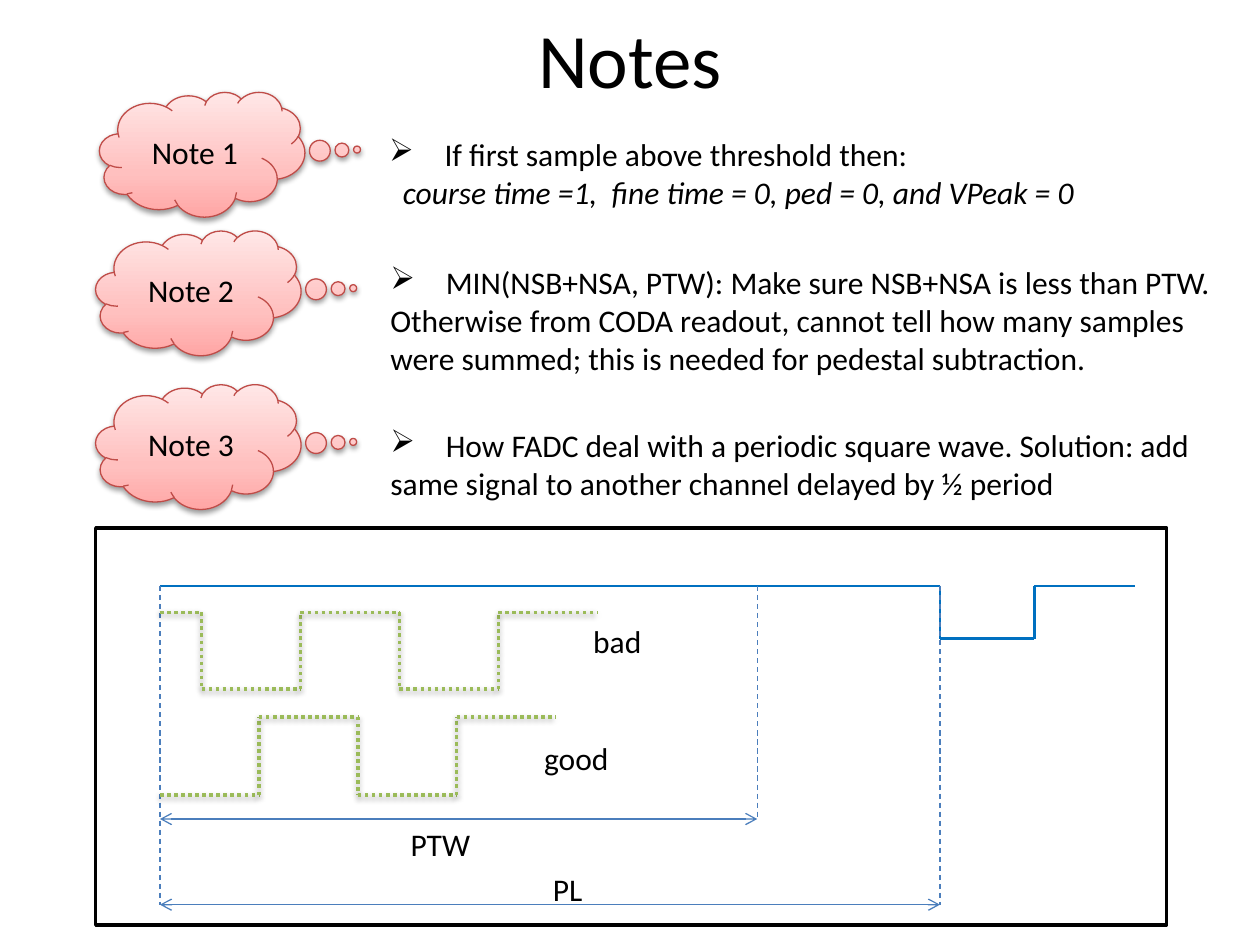
from itertools import pairwise

from pptx import Presentation
from pptx.dml.color import RGBColor
from pptx.enum.dml import MSO_LINE
from pptx.enum.shapes import MSO_CONNECTOR, MSO_SHAPE
from pptx.enum.text import MSO_ANCHOR, PP_ALIGN
from pptx.oxml import parse_xml
from pptx.oxml.ns import nsdecls
from pptx.util import Inches, Pt

BLACK = RGBColor(0x00, 0x00, 0x00)
CLOUD_EDGE = RGBColor(0xBF, 0x4C, 0x48)
CLOUD_STOPS = [
    (0, RGBColor(0xFF, 0xA6, 0xA5)),
    (35, RGBColor(0xFF, 0xC0, 0xBF)),
    (100, RGBColor(0xFF, 0xE7, 0xE7)),
]
PULSE_BLUE = RGBColor(0x00, 0x70, 0xC0)
GUIDE_BLUE = RGBColor(0x4B, 0x7E, 0xBC)
WAVE_GREEN = RGBColor(0x9B, 0xBB, 0x59)

SHADOW = (
    '<a:outerShdw blurRad="40000" dist="20000" dir="5400000" rotWithShape="0">'
    '<a:srgbClr val="000000"><a:alpha val="38000"/></a:srgbClr></a:outerShdw>'
)


def set_effects(shape, shadow):
    content = SHADOW if shadow else ""
    effects = parse_xml(f"<a:effectLst {nsdecls('a')}>{content}</a:effectLst>")
    shape._element.spPr.append(effects)


def set_gradient(shape, stops):
    """Fill the shape with a gradient that runs from bottom to top."""
    shape.fill.solid()
    properties = shape._element.spPr
    stop_xml = "".join(
        f'<a:gs pos="{position * 1000}"><a:srgbClr val="{color}"/></a:gs>'
        for position, color in stops
    )
    gradient = parse_xml(
        f'<a:gradFill {nsdecls("a")} rotWithShape="1"><a:gsLst>{stop_xml}</a:gsLst>'
        '<a:lin ang="16200000" scaled="0"/></a:gradFill>'
    )
    properties.replace(properties.find(".//{*}solidFill"), gradient)


def write_text(paragraph, text, size=18, italic=False, align=PP_ALIGN.LEFT,
               bullet=None, margin=0, hanging=0):
    paragraph.alignment = align
    run = paragraph.add_run()
    run.text = text
    run.font.name = "Calibri"
    run.font.size = Pt(size)
    run.font.italic = italic
    run.font.color.rgb = BLACK
    properties = paragraph._p.get_or_add_pPr()
    properties.set("marL", str(Inches(margin)))
    properties.set("indent", str(-Inches(hanging)))
    if bullet:
        properties.append(parse_xml(f'<a:buChar {nsdecls("a")} char="{bullet}"/>'))


def add_text_box(shapes, left, top, width, height, anchor=MSO_ANCHOR.TOP, wrap=False):
    box = shapes.add_textbox(Inches(left), Inches(top), Inches(width), Inches(height))
    box.text_frame.word_wrap = wrap
    box.text_frame.vertical_anchor = anchor
    return box.text_frame


def add_line(shapes, start, end, color, width, dash=None, shadow=False, arrows=False):
    line = shapes.add_connector(
        MSO_CONNECTOR.STRAIGHT, *(Inches(value) for value in (*start, *end))
    )
    line.line.color.rgb = color
    line.line.width = Pt(width)
    if dash:
        line.line.dash_style = dash
    if arrows:
        for end_name in ("headEnd", "tailEnd"):
            line.line._ln.append(
                parse_xml(f'<a:{end_name} {nsdecls("a")} type="arrow"/>')
            )
    set_effects(line, shadow)


def add_path(shapes, points, **style):
    for start, end in pairwise(points):
        add_line(shapes, start, end, **style)


def square_wave(start, high, low, steps, step, starts_high):
    """Return the corners of a square wave whose level changes at every step."""
    points = []
    for index in range(steps):
        level = high if (index % 2 == 0) == starts_high else low
        left = start + index * step
        points += [(left, level), (left + step, level)]
    return points


def add_title(slide, left, top, width, height):
    frame = add_text_box(slide.shapes, left, top, width, height,
                         anchor=MSO_ANCHOR.MIDDLE, wrap=True)
    write_text(frame.paragraphs[0], "Notes", size=44, align=PP_ALIGN.CENTER)


def add_cloud(slide, label, left, top, width=1.63, height=0.99):
    cloud = slide.shapes.add_shape(
        MSO_SHAPE.CLOUD_CALLOUT, Inches(left), Inches(top), Inches(width), Inches(height)
    )
    cloud.adjustments[0] = 0.754
    cloud.adjustments[1] = -0.038
    set_gradient(cloud, CLOUD_STOPS)
    cloud.line.color.rgb = CLOUD_EDGE
    cloud.line.width = Pt(0.75)
    set_effects(cloud, shadow=True)
    cloud.text_frame.vertical_anchor = MSO_ANCHOR.MIDDLE
    write_text(cloud.text_frame.paragraphs[0], label, align=PP_ALIGN.CENTER)


def add_note(slide, left, top, width, height, lines, **continuation):
    """Write a bulleted first line; continuation formats the lines after it."""
    frame = add_text_box(slide.shapes, left, top, width, height)
    write_text(frame.paragraphs[0], lines[0], bullet="➢", margin=0.44, hanging=0.44)
    for line in lines[1:]:
        write_text(frame.add_paragraph(), line, **continuation)


def add_timing_diagram(slide, left, top, width, height):
    shapes = slide.shapes.add_group_shape().shapes
    frame = shapes.add_shape(
        MSO_SHAPE.RECTANGLE, Inches(left), Inches(top), Inches(width), Inches(height)
    )
    frame.fill.background()
    frame.line.color.rgb = BLACK
    frame.line.width = Pt(2)
    frame.shadow.inherit = False

    start, window_end, pulse_start = left + 0.51, left + 5.25, left + 6.7
    pulse_end, trace_end = left + 7.45, left + 8.25
    baseline, pulse_low = top + 0.46, top + 0.88
    window_y, latency_y = top + 2.31, top + 2.99

    pulse = [(start, baseline), (pulse_start, baseline), (pulse_start, pulse_low),
             (pulse_end, pulse_low), (pulse_end, baseline), (trace_end, baseline)]
    add_path(shapes, pulse, color=PULSE_BLUE, width=1.5)

    for x, bottom in ((start, latency_y), (window_end, window_y), (pulse_start, latency_y)):
        add_line(shapes, (x, baseline), (x, bottom), GUIDE_BLUE, 0.75, dash=MSO_LINE.DASH)
    for x, y in ((window_end, window_y), (pulse_start, latency_y)):
        add_line(shapes, (start, y), (x, y), GUIDE_BLUE, 0.75, arrows=True)

    step = 0.785
    first_drop = start + 0.33
    bad_high, bad_low = top + 0.67, top + 1.28
    good_high, good_low = top + 1.5, top + 2.12
    bad = [(start, bad_high), (first_drop, bad_high)]
    bad += square_wave(first_drop, bad_high, bad_low, 4, step, starts_high=False)
    good = square_wave(start, good_high, good_low, 4, step, starts_high=False)
    for wave in (bad, good):
        add_path(shapes, wave, color=WAVE_GREEN, width=2,
                 dash=MSO_LINE.ROUND_DOT, shadow=True)

    labels = [("bad", 3.85, 0.7, 0.59), ("good", 3.46, 1.63, 0.72),
              ("PTW", 2.4, 2.31, 0.68), ("PL", 3.53, 2.67, 0.44)]
    for text, x, y, label_width in labels:
        label = add_text_box(shapes, left + x, top + y, label_width, 0.4)
        write_text(label.paragraphs[0], text)


def main():
    presentation = Presentation()
    presentation.slide_width = Inches(10)
    presentation.slide_height = Inches(7.5)
    slide = presentation.slides.add_slide(presentation.slide_layouts[6])

    add_title(slide, 0.5, 0, 9, 0.92)
    for label, left, top in (("Note 1", 0.79, 0.73), ("Note 2", 0.76, 1.83),
                             ("Note 3", 0.76, 3.05)):
        add_cloud(slide, label, left, top)

    add_note(slide, 2.99, 1.02, 5.9, 0.71, [
        "If first sample above threshold then:",
        "course time =1,  fine time = 0, ped = 0, and VPeak = 0",
    ], italic=True, margin=0.11)
    add_note(slide, 3, 2.04, 6.77, 1.01, [
        "MIN(NSB+NSA, PTW): Make sure NSB+NSA is less than PTW.",
        "Otherwise from CODA readout, cannot tell how many samples",
        "were summed; this is needed for pedestal subtraction.",
    ])
    add_note(slide, 3, 3.33, 6.62, 0.71, [
        "How FADC deal with a periodic square wave. Solution: add",
        "same signal to another channel delayed by ½ period",
    ])
    add_timing_diagram(slide, 0.76, 4.19, 8.5, 3.15)
    presentation.save("out.pptx")


if __name__ == "__main__":
    main()
